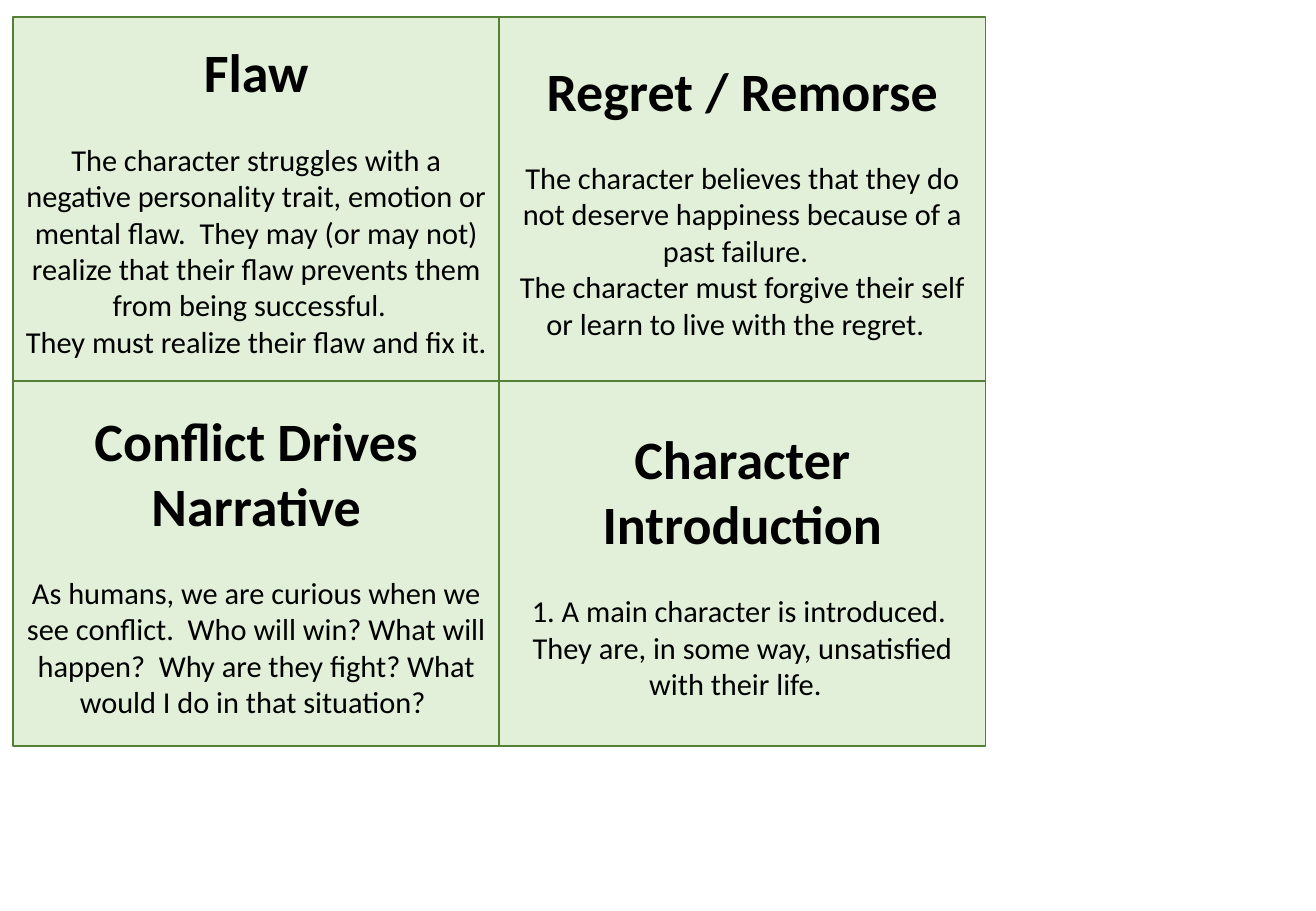
from pptx import Presentation
from pptx import util as u
from pptx.dml.color import RGBColor
from pptx.enum import shapes, text

PALE_GREEN = RGBColor(0xE2, 0xF0, 0xD9)
DARK_GREEN = RGBColor(0x53, 0x80, 0x35)
BLACK = RGBColor(0, 0, 0)

LEFT, TOP = 0.11, 0.14
CARD_WIDTH, CARD_HEIGHT = 4, 3
COLUMNS = 2

CARDS = [
    ("Flaw", [
        "The character struggles with a negative personality trait, emotion or mental flaw.  "
        "They may (or may not) realize that their flaw prevents them from being successful.  ",
        "They must realize their flaw and fix it. ",
    ]),
    ("Regret / Remorse", [
        "The character believes that they do not deserve happiness because of a past failure.  ",
        "The character must forgive their self or learn to live with the regret.  ",
    ]),
    ("Conflict Drives Narrative", [
        "As humans, we are curious when we see conflict.  Who will win? What will happen?  "
        "Why are they fight? What would I do in that situation? ",
    ]),
    ("Character Introduction", [
        "1. A main character is introduced.  They are, in some way, unsatisfied with their life.  ",
    ]),
]


def write(para, words, size=18, bold=False, gap=0):
    para.alignment = text.PP_ALIGN.CENTER
    para.space_before = u.Pt(gap)
    span = para.add_run()
    span.text = words
    span.font.name = "Calibri"
    span.font.size = u.Pt(size)
    span.font.bold = bold
    span.font.color.rgb = BLACK


deck = Presentation()
deck.slide_width = u.Inches(10.83)
deck.slide_height = u.Inches(7.5)
page = deck.slides.add_slide(deck.slide_layouts[6])

for index, (title, sentences) in enumerate(CARDS):
    row, column = divmod(index, COLUMNS)
    card = page.shapes.add_shape(
        shapes.MSO_SHAPE.RECTANGLE,
        u.Inches(LEFT + column * CARD_WIDTH), u.Inches(TOP + row * CARD_HEIGHT),
        u.Inches(CARD_WIDTH), u.Inches(CARD_HEIGHT))
    card.shadow.inherit = False
    card.fill.solid()
    card.fill.fore_color.rgb = PALE_GREEN
    card.line.color.rgb = DARK_GREEN
    card.line.width = u.Pt(1)

    frame = card.text_frame
    frame.word_wrap = True
    frame.vertical_anchor = text.MSO_ANCHOR.MIDDLE
    write(frame.paragraphs[0], title, size=32, bold=True)
    for number, sentence in enumerate(sentences):
        write(frame.add_paragraph(), sentence, gap=22 if number == 0 else 0)

deck.save("out.pptx")
